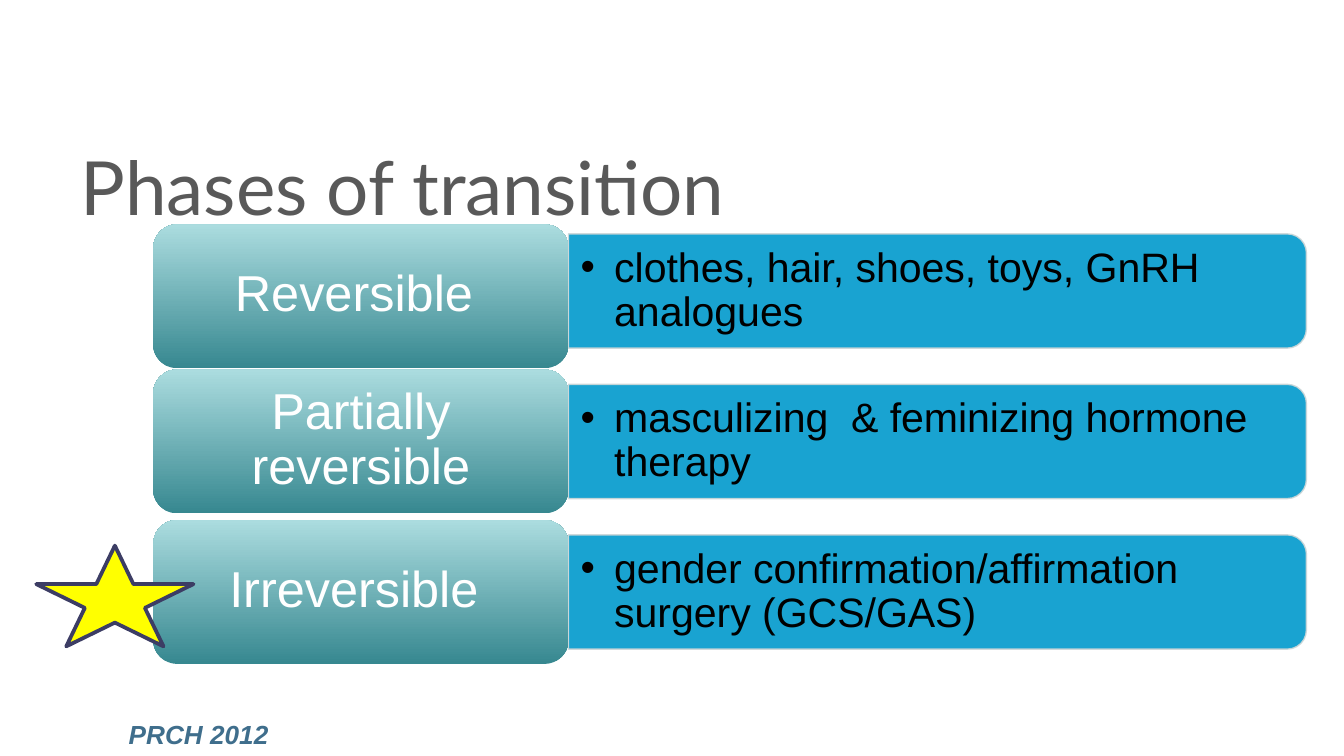
"""Build the slide on the phases of transition."""
from dataclasses import dataclass

from lxml.etree import SubElement
from pptx import Presentation
from pptx.dml.color import RGBColor
from pptx.enum.shapes import MSO_SHAPE
from pptx.enum.text import MSO_ANCHOR, MSO_AUTO_SIZE, PP_ALIGN
from pptx.oxml.ns import qn
from pptx.shapes.autoshape import Shape
from pptx.slide import Slide
from pptx.text.text import TextFrame, _Paragraph, _Run
from pptx.util import Inches, Pt

WHITE = RGBColor(0xFF, 0xFF, 0xFF)
BLACK = RGBColor(0x00, 0x00, 0x00)
TITLE_GREY = RGBColor(0x59, 0x59, 0x59)
BAR_BLUE = RGBColor(0x00, 0x99, 0xCC)
BAR_EDGE = RGBColor(0xCD, 0xD7, 0xD8)
TEAL_DARK = RGBColor(0x37, 0x88, 0x90)
TEAL_LIGHT = RGBColor(0xAB, 0xDC, 0xDF)
STAR_YELLOW = RGBColor(0xFF, 0xFF, 0x00)
STAR_EDGE = RGBColor(0x3C, 0x3D, 0x64)
SOURCE_BLUE = RGBColor(0x3F, 0x6E, 0x8C)

PAGE_WIDTH = 10
PAGE_HEIGHT = PAGE_WIDTH * 9 / 16
BAR_PITCH = 1.12
CORNER = 0.167


@dataclass(frozen=True)
class Box:
    left: float
    top: float
    width: float
    height: float

    def lengths(self) -> tuple[int, int, int, int]:
        return (Inches(self.left), Inches(self.top),
                Inches(self.width), Inches(self.height))


@dataclass(frozen=True)
class Phase:
    name: str
    examples: str
    label_top: float


PHASES = (
    Phase("Reversible ", "clothes, hair, shoes, toys, GnRH analogues", 1.67),
    Phase("Partially reversible", "masculizing  & feminizing hormone therapy", 2.75),
    Phase("Irreversible ", "gender confirmation/affirmation surgery (GCS/GAS)", 3.87),
)


def set_frame(frame: TextFrame, side: float, end: float, anchor: MSO_ANCHOR) -> None:
    frame.word_wrap = True
    frame.auto_size = MSO_AUTO_SIZE.NONE
    frame.vertical_anchor = anchor
    frame.margin_left = frame.margin_right = Inches(side)
    frame.margin_top = frame.margin_bottom = Inches(end)


def add_span(para: _Paragraph, text: str, size: float, color: RGBColor,
             font: str = "Arial") -> _Run:
    span = para.add_run()
    span.text = text
    span.font.name = font
    span.font.size = Pt(size)
    span.font.color.rgb = color
    return span


def add_text_box(page: Slide, box: Box, side: float, end: float,
                 anchor: MSO_ANCHOR = MSO_ANCHOR.MIDDLE) -> _Paragraph:
    frame = page.shapes.add_textbox(*box.lengths()).text_frame
    set_frame(frame, side, end, anchor)
    return frame.paragraphs[0]


def add_plain_shape(page: Slide, kind: MSO_SHAPE, box: Box) -> Shape:
    shape = page.shapes.add_shape(kind, *box.lengths())
    shape.shadow.inherit = False
    return shape


def paint(shape: Shape, fill: RGBColor, edge: RGBColor, width: float) -> None:
    shape.fill.solid()
    shape.fill.fore_color.rgb = fill
    shape.line.color.rgb = edge
    shape.line.width = Pt(width)


def add_bullet(para: _Paragraph, color: RGBColor) -> None:
    properties = para._p.get_or_add_pPr()
    properties.set("marL", str(Inches(0.25)))
    properties.set("indent", str(Inches(-0.25)))
    bullet_color = SubElement(properties, qn("a:buClr"))
    SubElement(bullet_color, qn("a:srgbClr"), val=str(color))
    SubElement(properties, qn("a:buFont"), typeface="Arial")
    SubElement(properties, qn("a:buChar"), char="•")


def add_bar(page: Slide, examples: str, offset: float) -> None:
    bar = add_plain_shape(page, MSO_SHAPE.ROUND_2_SAME_RECTANGLE,
                          Box(6.55, -0.58 + offset, 0.85, 5.49))
    bar.rotation = 90
    bar.adjustments[0] = CORNER
    bar.adjustments[1] = 0
    paint(bar, BAR_BLUE, BAR_EDGE, 0.75)
    for color in bar._element.spPr.iter(qn("a:srgbClr")):
        SubElement(color, qn("a:alpha"), val="90000")

    para = add_text_box(page, Box(4.23, 1.78 + offset, 5.45, 0.77), 0.09, 0.05)
    para.level = 1
    para.line_spacing = 0.9
    add_bullet(para, BLACK)
    add_span(para, examples, 22, BLACK)


def add_label(page: Slide, name: str, top: float) -> None:
    label = add_plain_shape(page, MSO_SHAPE.ROUNDED_RECTANGLE,
                            Box(1.14, top, 3.09, 1.07))
    label.adjustments[0] = CORNER
    label.line.fill.background()
    label.fill.gradient()
    label.fill.gradient_angle = 90
    for stop, color in zip(label.fill.gradient_stops, (TEAL_DARK, TEAL_LIGHT)):
        stop.color.rgb = color

    para = add_text_box(page, Box(1.19, top + 0.05, 2.99, 0.96), 0.11, 0.06)
    para.alignment = PP_ALIGN.CENTER
    para.line_spacing = 0.9
    add_span(para, name, 27, WHITE)


def add_title(page: Slide, text: str) -> None:
    title = page.shapes.title
    title.left, title.top, title.width, title.height = Box(0.5, 0.94, 9, 0.88).lengths()
    set_frame(title.text_frame, 0.1, 0.1, MSO_ANCHOR.MIDDLE)
    para = title.text_frame.paragraphs[0]
    para.alignment = PP_ALIGN.LEFT
    add_span(para, text, 40, TITLE_GREY, "Lato")


def add_star(page: Slide) -> None:
    star = add_plain_shape(page, MSO_SHAPE.STAR_5_POINT, Box(0.27, 4.06, 1.17, 0.75))
    paint(star, STAR_YELLOW, STAR_EDGE, 2)


def add_source(page: Slide, text: str) -> None:
    para = add_text_box(page, Box(0.86, 5.3, 3.94, 0.34), 0.1, 0.05, MSO_ANCHOR.TOP)
    span = add_span(para, text, 14, SOURCE_BLUE)
    span.font.bold = True
    span.font.italic = True


def main() -> None:
    deck = Presentation()
    deck.slide_width = Inches(PAGE_WIDTH)
    deck.slide_height = Inches(PAGE_HEIGHT)
    page = deck.slides.add_slide(deck.slide_layouts.get_by_name("Title Only"))
    add_title(page, "Phases of transition")
    for index, phase in enumerate(PHASES):
        add_bar(page, phase.examples, index * BAR_PITCH)
        add_label(page, phase.name, phase.label_top)
    add_star(page)
    add_source(page, "PRCH 2012")
    deck.save("out.pptx")


if __name__ == "__main__":
    main()
